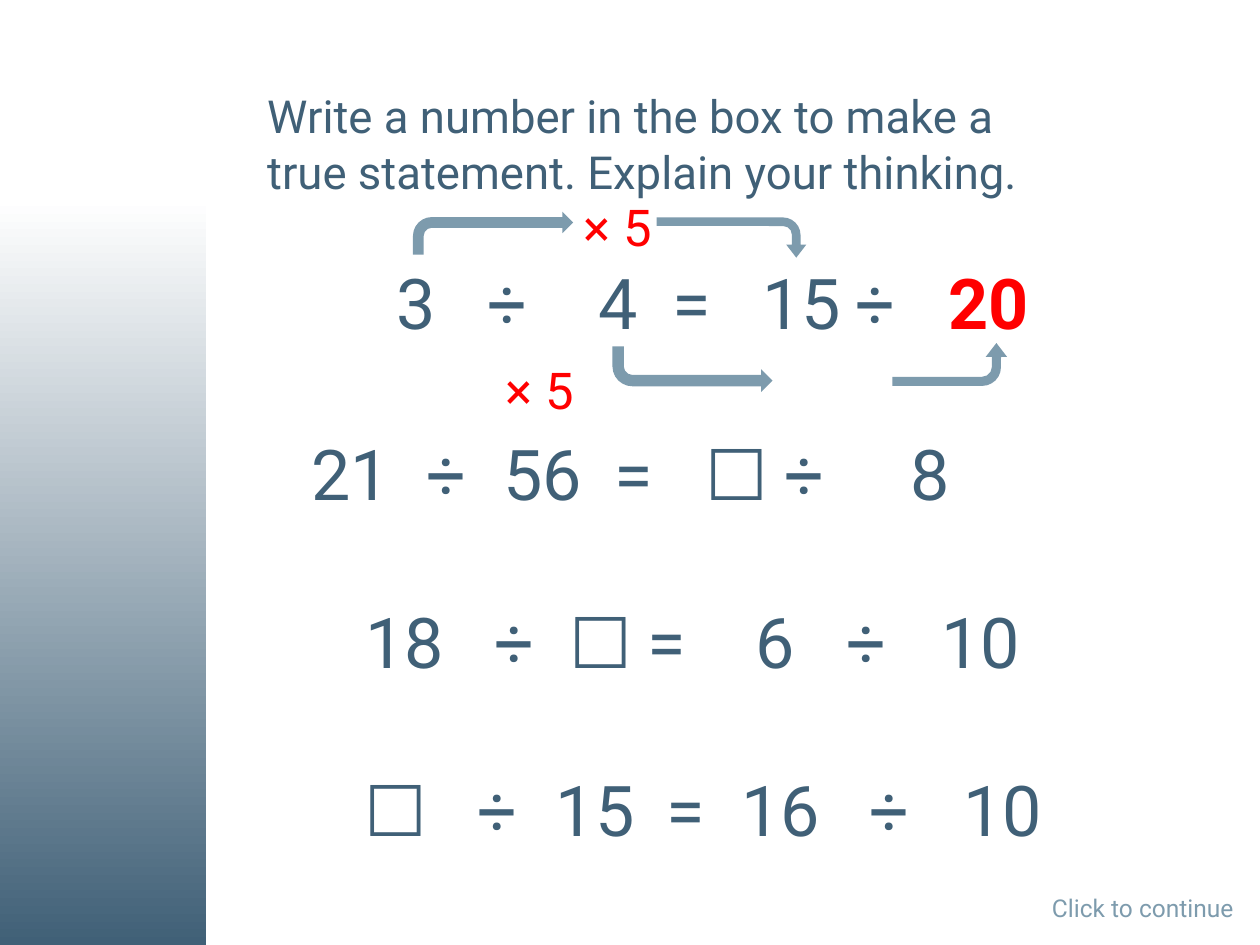
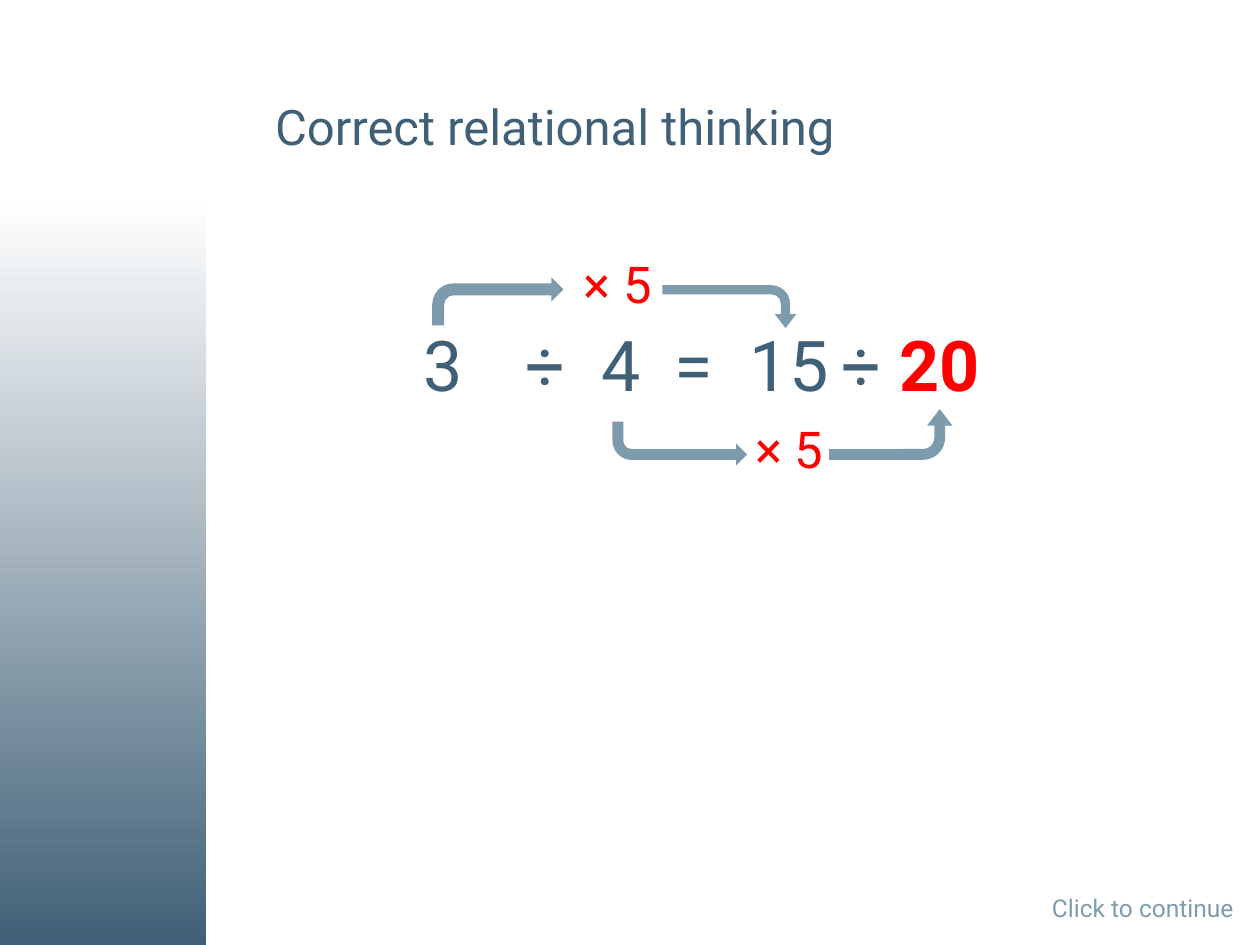
from lxml.etree import SubElement
from pptx import Presentation
from pptx.dml.color import RGBColor
from pptx.enum.shapes import MSO_SHAPE
from pptx.enum.text import MSO_ANCHOR, MSO_AUTO_SIZE, PP_ALIGN
from pptx.oxml.ns import qn
from pptx.util import Pt

COLOURS = {"slate": "406077", "steel": "7D9BAD", "answer": "FF0000", "white": "FFFFFF"}
FONT = "Roboto"
BOX_FONT = "Noto Sans CJK JP"
BLANK_BOX = "☐"
ANSWER = "20"
TITLE_ONLY = 5
EQUATION_LEFT = 150
EQUATION_WIDTH = 550
EQUATION_HEIGHT = 60
ROW_PITCH = 96
CURVE_DOWN = (0.213, 0.25, 0.324, 0.438)


def colour(name):
    return RGBColor.from_string(COLOURS[name])


def style(font, size, colour_name, name=FONT, bold=False):
    font.name = name
    font.size = Pt(size)
    font.bold = bold
    font.color.rgb = colour(colour_name)


def set_frame(shape, frame):
    shape.left, shape.top, shape.width, shape.height = map(Pt, frame)


def add_plain_text_box(page, frame):
    box = page.shapes.add_textbox(*map(Pt, frame))
    text_frame = box.text_frame
    text_frame.word_wrap = True
    text_frame.margin_left = text_frame.margin_right = 0
    text_frame.margin_top = text_frame.margin_bottom = 0
    return text_frame


def add_label(page, text, frame, size, colour_name, align=PP_ALIGN.LEFT):
    text_frame = add_plain_text_box(page, frame)
    text_frame.text = text
    para = text_frame.paragraphs[0]
    para.alignment = align
    style(para.runs[0].font, size, colour_name)


def add_factor(page, left, top):
    add_label(page, "× 5", (left, top, 60, 36), 29, "answer")


def set_title(page, text, frame, size, line_spacing):
    title = page.shapes.title
    set_frame(title, frame)
    text_frame = title.text_frame
    text_frame.text = text
    text_frame.word_wrap = True
    text_frame.auto_size = MSO_AUTO_SIZE.NONE
    text_frame.vertical_anchor = MSO_ANCHOR.TOP
    para = text_frame.paragraphs[0]
    para.alignment = PP_ALIGN.LEFT
    para.line_spacing = line_spacing
    for span in para.runs:
        style(span.font, size, "slate")


def add_equation(page, equation, centres, baseline):
    """Write the terms on one line, each centred on its own tab stop."""
    terms = equation.split()
    descent = 11.5 if BLANK_BOX in terms else 9.8
    top = baseline + descent - EQUATION_HEIGHT
    text_frame = add_plain_text_box(
        page, (EQUATION_LEFT, top, EQUATION_WIDTH, EQUATION_HEIGHT))
    text_frame.vertical_anchor = MSO_ANCHOR.BOTTOM
    para = text_frame.paragraphs[0]
    tabs = SubElement(para._p.get_or_add_pPr(), qn("a:tabLst"))
    for centre in centres:
        SubElement(tabs, qn("a:tab"), pos=str(Pt(centre - EQUATION_LEFT)), algn="ctr")
    for term in terms:
        span = para.add_run()
        span.text = "\t" + term
        if term == ANSWER:
            style(span.font, 40, "answer", bold=True)
        elif term == BLANK_BOX:
            style(span.font, 40, "slate", BOX_FONT, bold=True)
        else:
            style(span.font, 40, "slate")


def add_bent_arrow(page, frame, rotation=0, flip=None, adjustments=()):
    arrow = page.shapes.add_shape(MSO_SHAPE.BENT_ARROW, *map(Pt, frame))
    arrow.shadow.inherit = False
    arrow.fill.solid()
    arrow.fill.fore_color.rgb = colour("steel")
    arrow.line.fill.background()
    arrow.rotation = rotation
    for index, value in enumerate(adjustments):
        arrow.adjustments[index] = value
    if flip:
        arrow._element.spPr.xfrm.set(flip, "1")


def add_arrow_pairs(page, upper_start, upper_end, lower_start, lower_end):
    """Draw the way from first to third term above, second to fourth below."""
    add_bent_arrow(page, upper_start)
    add_bent_arrow(page, upper_end, 90, adjustments=CURVE_DOWN)
    add_bent_arrow(page, lower_start, flip="flipV")
    add_bent_arrow(page, lower_end, 90, "flipH", CURVE_DOWN)


def add_band_to_layout(page):
    """Make the gradient band and move it to the layout behind every slide."""
    band = page.shapes.add_shape(MSO_SHAPE.RECTANGLE, 0, 0, Pt(118), Pt(540))
    band.shadow.inherit = False
    band.line.fill.background()
    band.fill.gradient()
    band.fill.gradient_angle = 90
    for stop, position, name in zip(
            band.fill.gradient_stops, (0, 0.79), ("slate", "white")):
        stop.position = position
        stop.color.rgb = colour(name)
    page.slide_layout.shapes._spTree.insert(2, band._element)


def add_page(deck):
    page = deck.slides.add_slide(deck.slide_layouts[TITLE_ONLY])
    add_label(page, "Click to continue", (585, 510, 120, 18), 14, "steel", PP_ALIGN.RIGHT)
    return page


def build_exercise(page):
    set_title(page, "Write a number in the box to make a\vtrue statement. "
              "Explain your thinking.", (145.5, 46, 566, 78), 26, Pt(32))
    equations = [
        ("3 ÷ 4 = 15 ÷ 20", (238, 290, 353, 395, 458, 500.5, 565)),
        ("21 ÷ 56 = ☐ ÷ 8", (200.5, 255, 310, 362, 421, 459.5, 531.5)),
        ("18 ÷ ☐ = 6 ÷ 10", (231, 294, 343.5, 381, 443, 495, 560.5)),
        ("☐ ÷ 15 = 16 ÷ 10", (226, 284.5, 340, 392, 446, 508.5, 573)),
    ]
    for row, (equation, centres) in enumerate(equations):
        add_equation(page, equation, centres, 186.3 + row * ROW_PITCH)
    add_factor(page, 333.5, 112)
    add_factor(page, 289, 205)
    add_arrow_pairs(page, (236, 121, 91.5, 24.5), (406.5, 93, 23, 85.5),
                    (350, 198, 91.5, 26), (530.5, 175.5, 24.5, 65.5))


def build_solution(page):
    set_title(page, "Correct relational thinking", (150, 51.5, 561, 46), 28, 1.0)
    add_equation(page, "3 ÷ 4 = 15 ÷ 20",
                 (253, 311.5, 355, 396.5, 451, 492.5, 537), 222)
    add_factor(page, 333.5, 144.5)
    add_factor(page, 431.5, 239)
    add_arrow_pairs(page, (247, 158.5, 75, 27.5), (404.5, 137, 24.5, 76.5),
                    (350, 241, 77, 25), (494.5, 213, 29, 70.5))


def main():
    deck = Presentation()
    deck.slide_width, deck.slide_height = Pt(720), Pt(540)
    exercise = add_page(deck)
    add_band_to_layout(exercise)
    build_exercise(exercise)
    build_solution(add_page(deck))
    deck.save("out.pptx")


if __name__ == "__main__":
    main()
